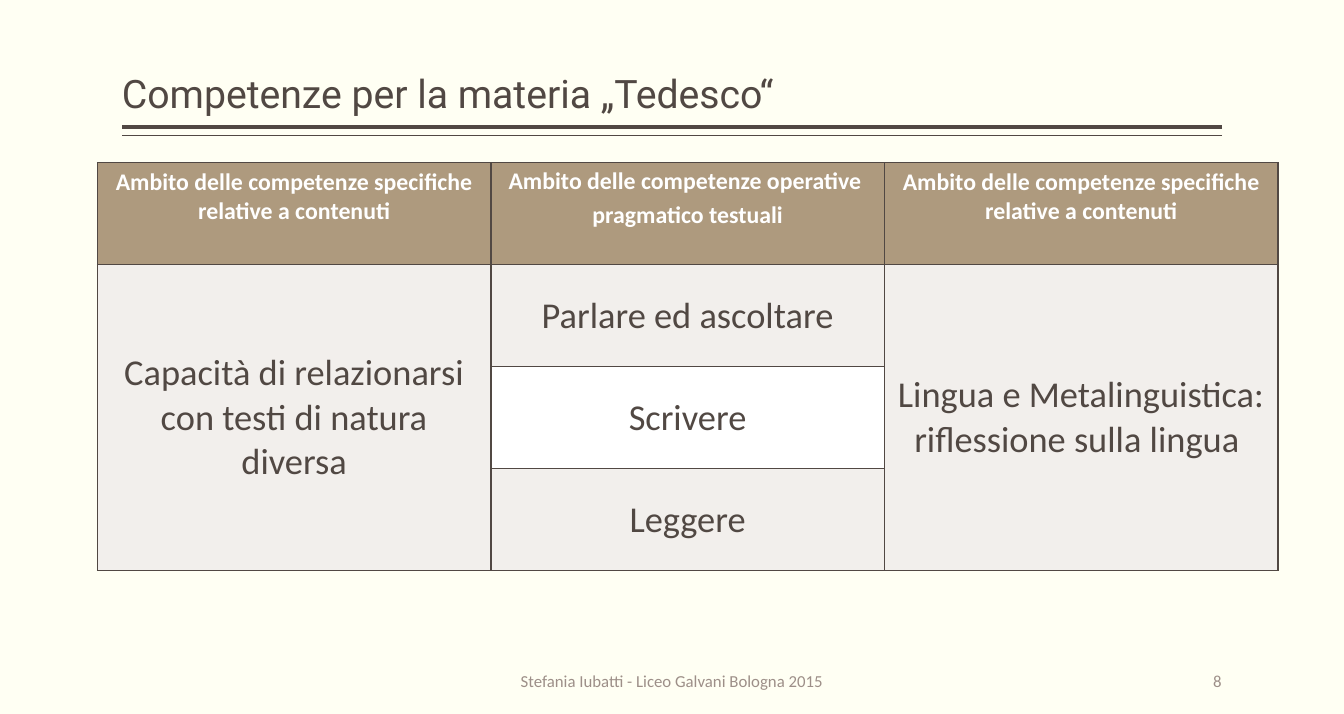
import pptx
import pptx.util
import pptx.dml.color
import pptx.enum.shapes
import pptx.enum.text
import pptx.oxml
import pptx.oxml.ns

Pt = pptx.util.Pt
ALIGN = pptx.enum.text.PP_ALIGN
ANCHOR = pptx.enum.text.MSO_ANCHOR

DARK, MUTED, CREAM, WHITE = "514843", "9D8F88", "FFFFF3", "FFFFFF"
TAN, BAND = "AE9A7E", "F2EFEC"
LEFT, RIGHT = 87.1, 873
COL_W, ROW_H = 281.1, 72.9

HEADERS = [
    ["Ambito delle competenze specifiche relative a contenuti"],
    ["Ambito delle competenze operative ", "pragmatico testuali"],
    ["Ambito delle competenze specifiche relative a contenuti"],
]
CONTENT = "Capacità di relazionarsi con testi di natura diversa"
SKILLS = ["Parlare ed ascoltare", "Scrivere", "Leggere"]
LANGUAGE = "Lingua e Metalinguistica: riflessione sulla lingua "


def rgb(color):
    return pptx.dml.color.RGBColor.from_string(color)


def write(tf, lines, size, color, align, font="Calibri", bold=False, spacing=1.0):
    for i, line in enumerate(lines):
        p = tf.paragraphs[0] if i == 0 else tf.add_paragraph()
        p.text = line
        p.alignment = align
        p.line_spacing = spacing
        p.font.name, p.font.size, p.font.bold = font, Pt(size), bold
        p.font.color.rgb = rgb(color)


def add_text(slide, x, y, w, h, text, size, color, align, anchor=ANCHOR.MIDDLE, **style):
    tf = slide.shapes.add_textbox(Pt(x), Pt(y), Pt(w), Pt(h)).text_frame
    tf.word_wrap = True
    tf.vertical_anchor = anchor
    tf.margin_left = tf.margin_right = 0
    tf.margin_top = tf.margin_bottom = Pt(3.6)
    write(tf, [text], size, color, align, **style)


def add_rule(slide, y, width):
    line = slide.shapes.add_connector(
        pptx.enum.shapes.MSO_CONNECTOR.STRAIGHT, Pt(RIGHT), Pt(y), Pt(LEFT), Pt(y))
    line.line.color.rgb = rgb(DARK)
    line.line.width = Pt(width)
    line._element.spPr.append(pptx.oxml.parse_xml(
        f"<a:effectLst {pptx.oxml.ns.nsdecls('a')}/>"))


def style_cell(cell, fill):
    # Borders come before the fill in the cell properties
    tcPr = cell._tc.get_or_add_tcPr()
    for side in ("lnL", "lnR", "lnT", "lnB"):
        tcPr.append(pptx.oxml.parse_xml(
            f"<a:{side} {pptx.oxml.ns.nsdecls('a')} w='{Pt(1)}'><a:solidFill>"
            f"<a:srgbClr val='{DARK}'/></a:solidFill></a:{side}>"))
    cell.fill.solid()
    cell.fill.fore_color.rgb = rgb(fill)


def write_body(cell, text):
    cell.vertical_anchor = ANCHOR.MIDDLE
    write(cell.text_frame, [text], 26, DARK, ALIGN.CENTER)


def add_competence_table(slide):
    rows, cols = len(SKILLS) + 1, len(HEADERS)
    table = slide.shapes.add_table(rows, cols, Pt(69.6), Pt(116.3),
                                   Pt(cols * COL_W), Pt(rows * ROW_H)).table
    for col in table.columns:
        col.width = Pt(COL_W)
    for r, row in enumerate(table.rows):
        row.height = Pt(ROW_H)
        for c, cell in enumerate(row.cells):
            plain = c == 1 and r == 2
            style_cell(cell, TAN if r == 0 else WHITE if plain else BAND)

    # Header row
    for c, lines in enumerate(HEADERS):
        cell = table.cell(0, c)
        spacing = 1.0
        if len(lines) > 1:
            spacing = 1.15
            cell.margin_left = cell.margin_right = Pt(5)
            cell.margin_top = cell.margin_bottom = 0
        write(cell.text_frame, lines, 17, WHITE, ALIGN.CENTER, bold=True, spacing=spacing)

    # Outer columns span all skills
    for c, text in ((0, CONTENT), (2, LANGUAGE)):
        table.cell(1, c).merge(table.cell(rows - 1, c))
        write_body(table.cell(1, c), text)
    for r, skill in enumerate(SKILLS, 1):
        write_body(table.cell(r, 1), skill)


def main():
    prs = pptx.Presentation()
    prs.slide_width = Pt(960)
    prs.slide_height = Pt(510.24)
    slide = prs.slides.add_slide(prs.slide_layouts[6])
    slide.background.fill.solid()
    slide.background.fill.fore_color.rgb = rgb(CREAM)

    # Title with double rule
    add_rule(slide, 90.7, 3)
    add_rule(slide, 96.9, 1)
    add_text(slide, LEFT, 32.4, RIGHT - LEFT, 54.7, "Competenze per la materia „Tedesco“",
             28, DARK, ALIGN.LEFT, ANCHOR.BOTTOM, font="Roboto", spacing=0.9)

    add_competence_table(slide)

    # Footer
    add_text(slide, 728.7, 472.8, 144, 27.2, "8", 12, MUTED, ALIGN.RIGHT)
    add_text(slide, 231, 472.8, 498, 27.2, "Stefania Iubatti - Liceo Galvani Bologna 2015",
             12, MUTED, ALIGN.CENTER)

    prs.save("out.pptx")


if __name__ == "__main__":
    main()
